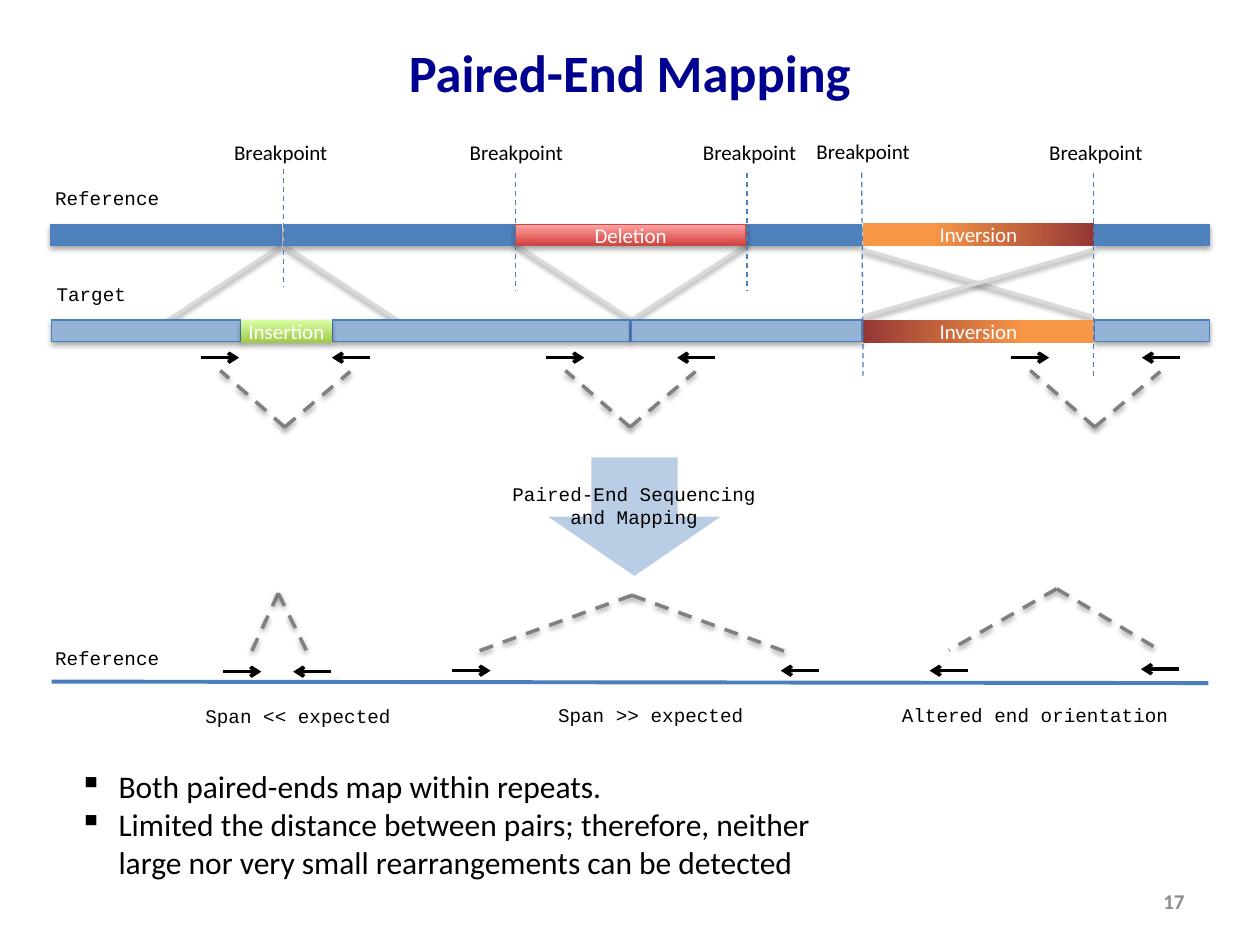
from pptx import Presentation
from pptx.dml.color import RGBColor
from pptx.enum.dml import MSO_LINE
from pptx.enum.shapes import MSO_CONNECTOR, MSO_SHAPE
from pptx.enum.text import MSO_ANCHOR, MSO_AUTO_SIZE, PP_ALIGN
from pptx.oxml.ns import qn
from pptx.util import Cm, Pt
from lxml import etree

STRAIGHT = MSO_CONNECTOR.STRAIGHT
RECT, DOWN = MSO_SHAPE.RECTANGLE, MSO_SHAPE.DOWN_ARROW
LEFT, MID, RIGHT = PP_ALIGN.LEFT, PP_ALIGN.CENTER, PP_ALIGN.RIGHT
MIDDLE, TOP = MSO_ANCHOR.MIDDLE, MSO_ANCHOR.TOP
GROW, DASH = MSO_AUTO_SIZE.SHAPE_TO_FIT_TEXT, MSO_LINE.DASH

SANS, MONO = "Calibri", "Courier New"
BLUE, PALE, EDGE = "4F81BD", "95B3D7", "4B7EBC"
GREEN = [(0, "A0CA4A"), (1, "DAFFA5")]
RED = [(0, "D1403C"), (1, "FFA6A5")]
ORANGE = [(0.3, "F79646"), (1, "953735")]
REF_Y, TAR_Y, THICK = 4.52, 6.45, 0.43


def color(code):
    return RGBColor.from_string(code)


def sub(node, tag, **attrs):
    return etree.SubElement(node, qn(tag), attrs)


def shade(effects, dist, alpha):
    """Fill an effect list with a soft shadow that falls straight down."""
    drop = sub(effects, "a:outerShdw", blurRad="40000", dist=str(dist),
               dir="5400000", rotWithShape="0")
    black = sub(drop, "a:srgbClr", val="000000")
    sub(black, "a:alpha", val=str(alpha))


def style(frame, size, font, ink, align, bold=False):
    for para in frame.paragraphs:
        para.alignment = align
        for run in para.runs:
            run.font.size = Pt(size)
            run.font.name = font
            run.font.bold = bold
            run.font.color.rgb = color(ink)


def label(slide, text, x, y, w, h, size=11, font=MONO, ink="000000",
          align=LEFT, wrap=False, anchor=TOP, bold=False):
    box = slide.shapes.add_textbox(Cm(x), Cm(y), Cm(w), Cm(h))
    frame = box.text_frame
    frame.text = text
    frame.word_wrap = wrap
    frame.vertical_anchor = anchor
    if anchor == TOP:
        frame.auto_size = GROW
    style(frame, size, font, ink, align, bold)
    return frame


def line(slide, start, end, ink, width, dash=False, shadow=False, head=False):
    wire = slide.shapes.add_connector(
        STRAIGHT, Cm(start[0]), Cm(start[1]), Cm(end[0]), Cm(end[1]))
    wire.line.color.rgb = color(ink)
    wire.line.width = Pt(width)
    if dash:
        wire.line.dash_style = DASH
    props = wire._element.spPr
    if head:
        sub(props.find(qn("a:ln")), "a:tailEnd", type="arrow")
    effects = sub(props, "a:effectLst")
    if shadow:
        shade(effects, 20000, 38000)


def block(slide, kind, x, y, w, h, fill, edge=None, shadow=False,
          angle=0, text="", inset=0.25):
    """A solid shape, or a gradient one when fill is a list of stops."""
    shape = slide.shapes.add_shape(kind, Cm(x), Cm(y), Cm(w), Cm(h))
    if isinstance(fill, str):
        shape.fill.solid()
        shape.fill.fore_color.rgb = color(fill)
    else:
        shape.fill.gradient()
        shape.fill.gradient_angle = angle
        for stop, (pos, code) in zip(shape.fill.gradient_stops, fill):
            stop.position = pos
            stop.color.rgb = color(code)
    if edge:
        shape.line.color.rgb = color(edge)
        shape.line.width = Pt(0.75)
    else:
        shape.line.fill.background()
    shape.shadow.inherit = False
    if shadow:
        shade(shape._element.spPr.find(qn("a:effectLst")), 23000, 35000)
    if text:
        frame = shape.text_frame
        frame.text = text
        frame.vertical_anchor = MIDDLE
        frame.margin_left = frame.margin_right = Cm(inset)
        style(frame, 12, SANS, "FFFFFF", MID)


def pair(slide, apex, left, right):
    """Dashed legs that tie the two ends of a read pair."""
    for foot in (left, right):
        line(slide, apex, foot, "808080", 2, dash=True, shadow=True)


def read(slide, x, y, way):
    line(slide, (x, y), (x + 0.77 * way, y), "000000", 2, head=True)


def bullets(slide, items, x, y, w, h):
    frame = label(slide, "\n".join(items), x, y, w, h, 18, SANS, wrap=True)
    for para in frame.paragraphs:
        props = para._p.get_or_add_pPr()
        props.set("marL", str(Cm(0.79)))
        props.set("indent", str(-Cm(0.79)))
        sub(props, "a:buChar", char="▪")


def links(slide):
    for start, end in [
        ((5.66, 4.95), (3.35, 6.48)), ((5.72, 4.95), (8.05, 6.48)),
        ((10.39, 4.93), (12.73, 6.45)), ((15.06, 4.93), (12.73, 6.45)),
        ((17.4, 5.03), (22.02, 6.38)), ((22.05, 5.03), (17.4, 6.38)),
    ]:
        line(slide, start, end, "D9D9D9", 2, shadow=True)


def bars(slide):
    rows = [
        (REF_Y, BLUE, [(1.02, 4.65), (5.74, 4.65), (15.06, 2.31), (22.07, 2.31)]),
        (TAR_Y, PALE, [(1.04, 3.81), (6.71, 5.99), (12.73, 4.65), (22.07, 2.31)]),
    ]
    for y, fill, spans in rows:
        for x, w in spans:
            block(slide, RECT, x, y, w, THICK, fill, EDGE, True)
    block(slide, RECT, 10.39, REF_Y, 4.65, THICK, RED, "BF4C48", True, 90, "Deletion")
    block(slide, RECT, 4.85, TAR_Y, 1.85, 0.46, GREEN, None, True, 90, "Insertion", 0)
    for y, angle in ((4.5, 0), (TAR_Y, 180)):
        block(slide, RECT, 17.4, y, 4.65, 0.46, ORANGE, angle=angle, text="Inversion")


def breaks(slide):
    for x, top, foot, end, left, y in [
        (5.72, 3.4, 5.72, 5.77, 4.47, 2.69),
        (10.39, 3.48, 10.39, 5.87, 9.22, 2.69),
        (15.06, 3.48, 15.06, 5.87, 13.92, 2.69),
        (17.37, 3.48, 17.4, 7.57, 16.21, 2.67),
        (22.05, 3.48, 22.05, 7.57, 20.9, 2.69),
    ]:
        line(slide, (x, top), (foot, end), EDGE, 0.75, dash=True)
        label(slide, "Breakpoint", left, y, 2.41, 0.76, 12, SANS)


def reads(slide):
    # Pairs under the target
    for x in (5.74, 12.7, 22.07):
        pair(slide, (x, 8.61), (x - 1.3, 7.47), (x + 1.32, 7.49))
        read(slide, x - 1.69, 7.21, 1)
        read(slide, x + 1.72, 7.21, -1)
    # Pairs mapped on the reference
    pair(slide, (5.61, 11.96), (5.05, 13.18), (6.2, 13.16))
    pair(slide, (12.74, 12), (9.63, 13.13), (15.82, 13.13))
    pair(slide, (21.3, 11.87), (19.13, 13.11), (23.42, 13.13))
    for x, y, way in [(4.5, 13.54, 1), (6.68, 13.54, -1), (9.12, 13.52, 1),
                      (16.51, 13.52, -1), (19.51, 13.52, -1), (23.77, 13.49, -1)]:
        read(slide, x, y, way)


def main():
    deck = Presentation()
    deck.slide_width, deck.slide_height = Cm(25.4), Cm(19.05)
    slide = deck.slides.add_slide(deck.slide_layouts[6])

    label(slide, "Paired-End Mapping", 1.27, 0.2, 22.86, 2.49, 30, SANS,
          "000090", MID, True, MIDDLE, True)
    # Reference against target
    links(slide)
    bars(slide)
    breaks(slide)
    # Step arrow and reference axis
    block(slide, DOWN, 11.05, 9.22, 3.48, 2.39, "B9CDE5")
    label(slide, "Paired-End Sequencing and Mapping", 9.75, 9.6, 6.07, 1.19,
          align=MID, wrap=True)
    line(slide, (1.04, 13.74), (24.36, 13.77), EDGE, 2.25)
    reads(slide)
    # Row names and captions
    for text, x, y, w in [
        ("Reference", 0.86, 3.63, 2.64), ("Target", 0.89, 5.56, 1.93),
        ("Reference", 0.86, 12.9, 2.64), ("Span << expected", 3.89, 14.07, 4.29),
        ("Span >> expected", 11, 14.05, 4.29),
        ("Altered end orientation", 17.93, 14.05, 5.92),
    ]:
        label(slide, text, x, y, w, 0.74)
    # Notes and page number
    bullets(slide, ["Both paired-ends map within repeats.",
                    "Limited the distance between pairs; therefore, neither "
                    "large nor very small rearrangements can be detected"],
            1.35, 15.34, 16.31, 2.57)
    label(slide, "17", 18.21, 17.65, 5.92, 1.02, 12, SANS, "8C8C8C", RIGHT,
          True, MIDDLE, True)
    deck.save("out.pptx")


if __name__ == "__main__":
    main()
